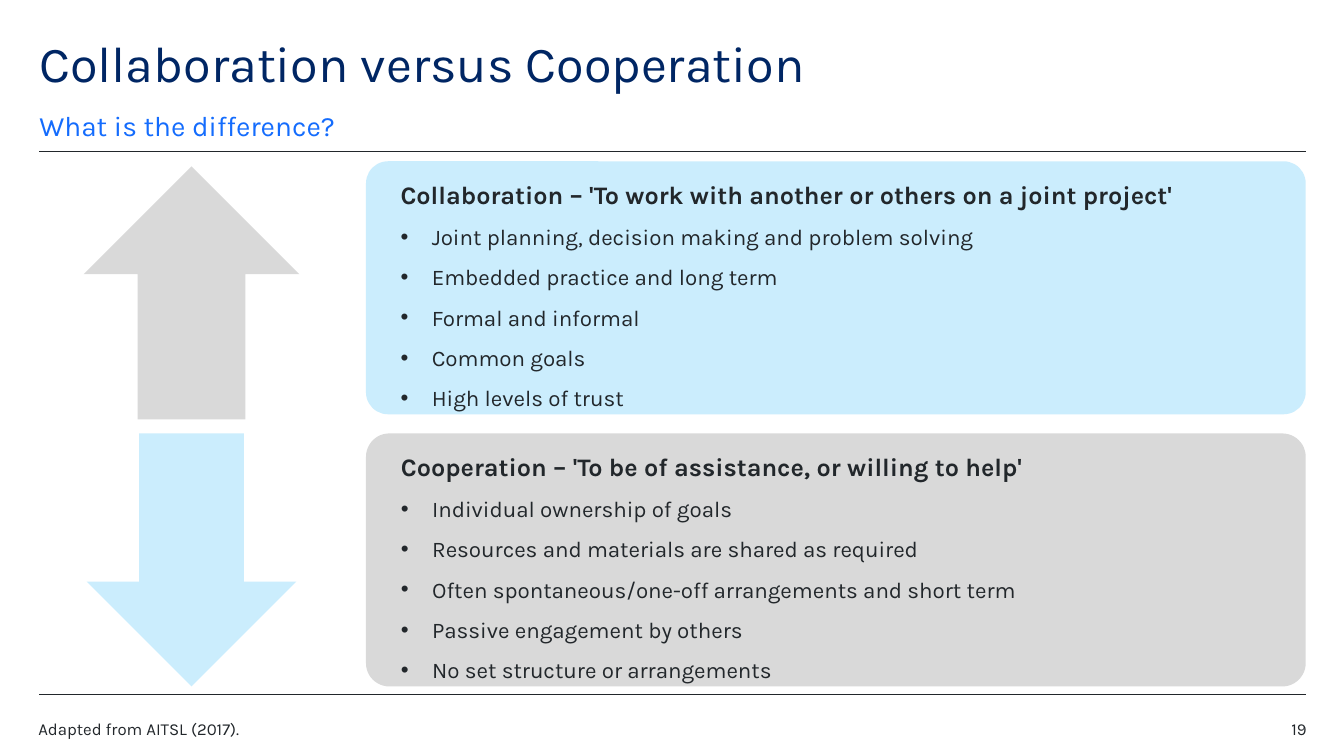
from lxml import etree
from pptx import Presentation
from pptx import util as u
from pptx.dml.color import RGBColor
from pptx.enum import shapes, text
from pptx.oxml import ns

FONT = "Karla"
NAVY = RGBColor(0x00, 0x26, 0x64)
BLUE = RGBColor(0x14, 0x6C, 0xFD)
INK = RGBColor(0x22, 0x27, 0x2B)
SKY = RGBColor(0xCB, 0xED, 0xFD)
GREY = RGBColor(0xD9, 0xD9, 0xD9)

MARGIN = 0.39
CONTENT_WIDTH = 12.56
ROWS = [
    (1.6, SKY, 0.087, "Collaboration – 'To work with another or others on a joint project'", [
        "Joint planning, decision making and problem solving",
        "Embedded practice and long term",
        "Formal and informal",
        "Common goals",
        "High levels of trust",
    ]),
    (4.3, GREY, 0.092, "Cooperation – 'To be of assistance, or willing to help'", [
        "Individual ownership of goals",
        "Resources and materials are shared as required",
        "Often spontaneous/one-off arrangements and short term",
        "Passive engagement by others",
        "No set structure or arrangements",
    ]),
]


def inches(box):
    return [u.Inches(length) for length in box]


def add_span(para, words, size, color, bold=False):
    span = para.add_run()
    span.text = words
    span.font.name = FONT
    span.font.size = u.Pt(size)
    span.font.bold = bold
    span.font.color.rgb = color


def add_label(page, box, words, size, color, spacing=1.0,
              anchor=text.MSO_ANCHOR.TOP, align=text.PP_ALIGN.LEFT):
    frame = page.shapes.add_textbox(*inches(box)).text_frame
    frame.word_wrap = True
    frame.vertical_anchor = anchor
    frame.margin_left = frame.margin_top = frame.margin_right = frame.margin_bottom = 0
    para = frame.paragraphs[0]
    para.alignment = align
    para.line_spacing = spacing
    add_span(para, words, size, color)


def add_rule(page, left, top, width):
    rule = page.shapes.add_connector(
        shapes.MSO_CONNECTOR.STRAIGHT, *inches((left, top, left + width, top)))
    rule.line.color.rgb = INK
    rule.line.width = u.Pt(0.5)
    etree.SubElement(rule._element.spPr, ns.qn("a:effectLst"))


def add_filled(page, preset, box, fill):
    shape = page.shapes.add_shape(preset, *inches(box))
    shape.shadow.inherit = False
    shape.fill.solid()
    shape.fill.fore_color.rgb = fill
    shape.line.fill.background()
    return shape


def add_header(page, left, top, width):
    add_label(page, (left, top, width, 0.6), "Collaboration versus Cooperation", 36, NAVY, 0.9)
    add_label(page, (left, top + 0.68, width, 0.34), "What is the difference?", 20, BLUE, 1.5,
              text.MSO_ANCHOR.BOTTOM)


def add_card(page, box, fill, rounding, heading, points):
    card = add_filled(page, shapes.MSO_SHAPE.ROUNDED_RECTANGLE, box, fill)
    card.adjustments[0] = rounding
    frame = card.text_frame
    frame.word_wrap = True
    frame.vertical_anchor = text.MSO_ANCHOR.MIDDLE
    for index, words in enumerate([heading, *points]):
        is_heading = index == 0
        para = frame.paragraphs[0] if is_heading else frame.add_paragraph()
        para.alignment = text.PP_ALIGN.LEFT
        para.line_spacing = 1.5
        settings = para._p.get_or_add_pPr()
        settings.set("marL", str(u.Inches(0.49)))
        settings.set("indent", str(u.Inches(-0.31)))
        if not is_heading:
            etree.SubElement(settings, ns.qn("a:buFont"), typeface="Arial")
            etree.SubElement(settings, ns.qn("a:buChar"), char="•")
        add_span(para, words, 18 if is_heading else 16, INK, is_heading)


def add_arrows(page, center, top):
    for preset, offset, width, height, fill in (
        (shapes.MSO_SHAPE.UP_ARROW, 0, 2.14, 2.51, GREY),
        (shapes.MSO_SHAPE.DOWN_ARROW, 2.65, 2.08, 2.51, SKY),
    ):
        add_filled(page, preset, (center - width / 2, top + offset, width, height), fill)


def add_footer(page, left, top, width):
    add_label(page, (left, top, 7.94, 0.2), "Adapted from AITSL (2017).", 12, INK)
    add_label(page, (left + width - 0.79, top, 0.79, 0.2), "19", 12, INK,
              align=text.PP_ALIGN.RIGHT)


def main():
    deck = Presentation()
    deck.slide_width, deck.slide_height = inches((13.33, 7.5))
    page = deck.slides.add_slide(deck.slide_layouts[6])
    for top in (1.5, 6.89):
        add_rule(page, MARGIN, top, CONTENT_WIDTH)
    add_header(page, MARGIN, MARGIN, 11.02)
    for top, *content in ROWS:
        add_card(page, (3.63, top, 9.32, 2.51), *content)
    add_arrows(page, 1.9, 1.65)
    add_footer(page, 0.38, 7.13, 12.58)
    deck.save("out.pptx")


if __name__ == "__main__":
    main()
